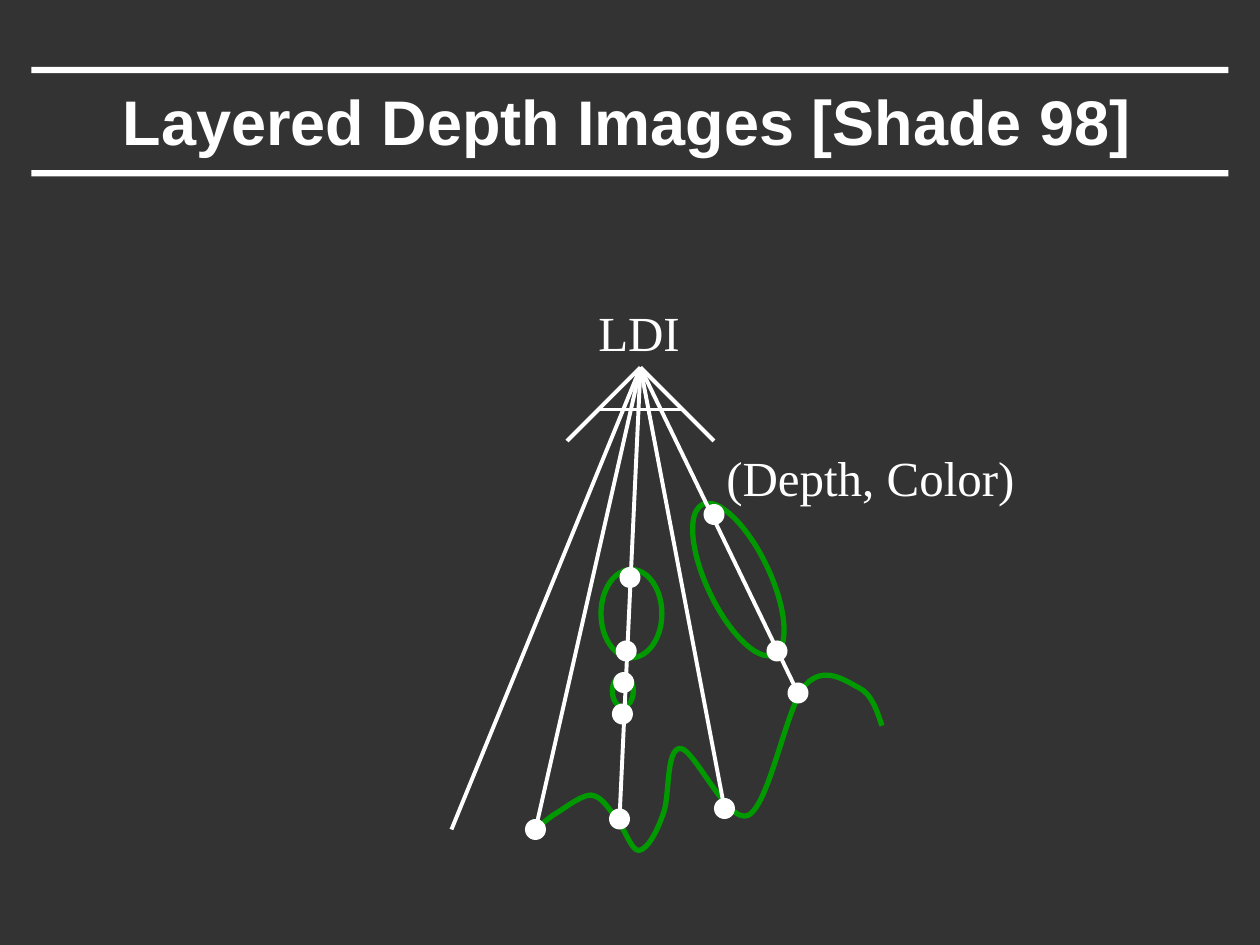
from dataclasses import dataclass

from lxml import etree
from pptx import Presentation
from pptx.dml.color import RGBColor
from pptx.enum.shapes import MSO_CONNECTOR, MSO_SHAPE
from pptx.enum.text import MSO_ANCHOR, PP_ALIGN
from pptx.oxml.ns import qn
from pptx.util import Inches, Pt

STRAIGHT = MSO_CONNECTOR.STRAIGHT
RECTANGLE, OVAL = MSO_SHAPE.RECTANGLE, MSO_SHAPE.OVAL
TOP, MIDDLE = MSO_ANCHOR.TOP, MSO_ANCHOR.MIDDLE
LEFT, CENTER = PP_ALIGN.LEFT, PP_ALIGN.CENTER

COLORS = {"background": "333333", "foreground": "FFFFFF", "surface": "009900"}
CELLS_PER_INCH = 12
DOT_SIZE = 2

APEX = (19, 11)
CAMERA_LINES = [((12, 18), APEX), (APEX, (26, 18)), ((15, 15), (23, 15))]
RAYS = [
    ((9, 55), [(9, 55)]),
    ((17, 54), [(18, 31), (17.64, 38), (17.4, 41), (17.28, 44), (17, 54)]),
    ((27, 53), [(27, 53)]),
    ((34, 42), [(34, 42), (32, 38), (26, 25)]),
]
EMPTY_RAY_END = (1, 55)
OBJECTS = [
    ((15.24, 30.24, 5.8, 8.4), 0),
    ((25.32, 23.28, 6, 15.84), 334.5),
    ((16.32, 40.32, 2, 3), 0),
]
GROUND_START = (9.24, 54.96)
GROUND_CURVES = [
    ((9.48, 54.6), (9.84, 54.24), (10.68, 53.64)),
    ((11.52, 53.16), (13.32, 51.72), (14.28, 51.72)),
    ((15.36, 51.84), (15.96, 53.04), (16.68, 53.88)),
    ((17.4, 54.72), (18.12, 57), (18.84, 57)),
    ((19.68, 56.88), (20.52, 55.32), (21.12, 53.64)),
    ((21.84, 52.08), (21.36, 47.28), (22.8, 47.28)),
    ((24.12, 47.28), (27.36, 54.6), (29.28, 53.64)),
    ((31.32, 52.56), (32.88, 43.32), (34.68, 41.28)),
    ((36.48, 39.24), (38.64, 40.92), (39.84, 41.52)),
    ((41.04, 42.12), (41.52, 43.68), (42, 45.12)),
]
LABELS = [("LDI", (13.8, 4.2, 10.2, 6.84), False),
          ("(Depth, Color)", (26, 18, 29.88, 6.84), True)]


@dataclass
class Box:
    """A region in inches that is divided into square cells."""
    left: float
    top: float
    width: float
    height: float

    def point(self, column, row):
        """Return the slide position of a grid point."""
        return (Inches(self.left + column / CELLS_PER_INCH),
                Inches(self.top + row / CELLS_PER_INCH))

    def area(self, column, row, columns, rows):
        """Return the slide position and size of a block of cells."""
        return (*self.point(column, row), Inches(columns / CELLS_PER_INCH),
                Inches(rows / CELLS_PER_INCH))


def color(name):
    """Return a named colour."""
    return RGBColor.from_string(COLORS[name])


def add_filled(parent, kind, area):
    """Add a plain shape in the foreground colour to a slide or group."""
    shape = parent.shapes.add_shape(kind, *area)
    shape.shadow.inherit = False
    shape.fill.solid()
    shape.fill.fore_color.rgb = color("foreground")
    shape.line.fill.background()


def style_outline(shape):
    """Leave a shape unfilled with a surface-coloured outline."""
    shape.shadow.inherit = False
    shape.fill.background()
    shape.line.color.rgb = color("surface")
    shape.line.width = Pt(3)


def add_line(parent, start, end):
    """Add a straight line between two positions to a slide or group."""
    line = parent.shapes.add_connector(STRAIGHT, *start, *end)
    line.line.color.rgb = color("foreground")
    line.line.width = Pt(2.25)
    etree.SubElement(line._element.spPr, qn("a:effectLst"))


def add_text(slide, area, text, font, size, bold=False, wrap=True,
             alignment=LEFT, anchor=TOP):
    """Add a single-paragraph text box."""
    frame = slide.shapes.add_textbox(*area).text_frame
    frame.word_wrap = wrap
    frame.vertical_anchor = anchor
    paragraph = frame.paragraphs[0]
    paragraph.text = text
    paragraph.alignment = alignment
    paragraph.font.name = font
    paragraph.font.size = Pt(size)
    paragraph.font.bold = bold
    paragraph.font.color.rgb = color("foreground")


def add_curve(slide, box, start, curves):
    """Add an open chain of cubic curves, three points to each curve."""
    builder = slide.shapes.build_freeform(*box.point(*start), scale=1)
    builder.add_line_segments([box.point(*point) for curve in curves for point in curve],
                              close=False)
    shape = builder.convert_to_shape()
    segments = list(shape._element.iter(qn("a:lnTo")))
    for first, second, third in zip(segments[::3], segments[1::3], segments[2::3]):
        first.tag = qn("a:cubicBezTo")
        for segment in (second, third):
            first.append(segment[0])
            segment.getparent().remove(segment)
    style_outline(shape)


def add_title(slide, box, text):
    """Place the title between two horizontal bars."""
    bar = 0.05
    for top in (box.top + box.height - bar, box.top):
        add_filled(slide, RECTANGLE,
                   [Inches(length) for length in (box.left, top, box.width, bar)])
    area = (box.left + 0.49, box.top + bar, 8.47, 0.75)
    add_text(slide, [Inches(length) for length in area], text, "Arial", 36,
             bold=True, alignment=CENTER, anchor=MIDDLE)


def add_scene(slide, box):
    """Draw the ground and the closed objects."""
    add_curve(slide, box, GROUND_START, GROUND_CURVES)
    for cells, rotation in OBJECTS:
        ring = slide.shapes.add_shape(OVAL, *box.area(*cells))
        ring.rotation = rotation
        style_outline(ring)


def add_ray(slide, box, end, samples):
    """Group a ray from the apex with the dots of its depth samples."""
    group = slide.shapes.add_group_shape()
    add_line(group, box.point(*APEX), box.point(*end))
    for column, row in samples:
        add_filled(group, OVAL, box.area(column - DOT_SIZE / 2, row - DOT_SIZE / 2,
                                         DOT_SIZE, DOT_SIZE))


def add_diagram(slide, box):
    """Draw the scene, the camera, its rays with depth samples and the labels."""
    add_scene(slide, box)
    for start, end in CAMERA_LINES:
        add_line(slide, box.point(*start), box.point(*end))
    for end, samples in RAYS:
        add_ray(slide, box, end, samples)
    add_line(slide, box.point(*APEX), box.point(*EMPTY_RAY_END))
    for text, cells, wrap in LABELS:
        add_text(slide, box.area(*cells), text, "Times New Roman", 28, wrap=wrap)


def main():
    """Build and save the presentation."""
    presentation = Presentation()
    presentation.slide_width, presentation.slide_height = Inches(10), Inches(7.5)
    slide = presentation.slides.add_slide(presentation.slide_layouts[6])
    slide.background.fill.solid()
    slide.background.fill.fore_color.rgb = color("background")
    add_title(slide, Box(0.25, 0.53, 9.5, 0.87), "Layered Depth Images [Shade 98]")
    add_diagram(slide, Box(3.5, 2, 4.75, 5))
    presentation.save("out.pptx")


if __name__ == "__main__":
    main()
